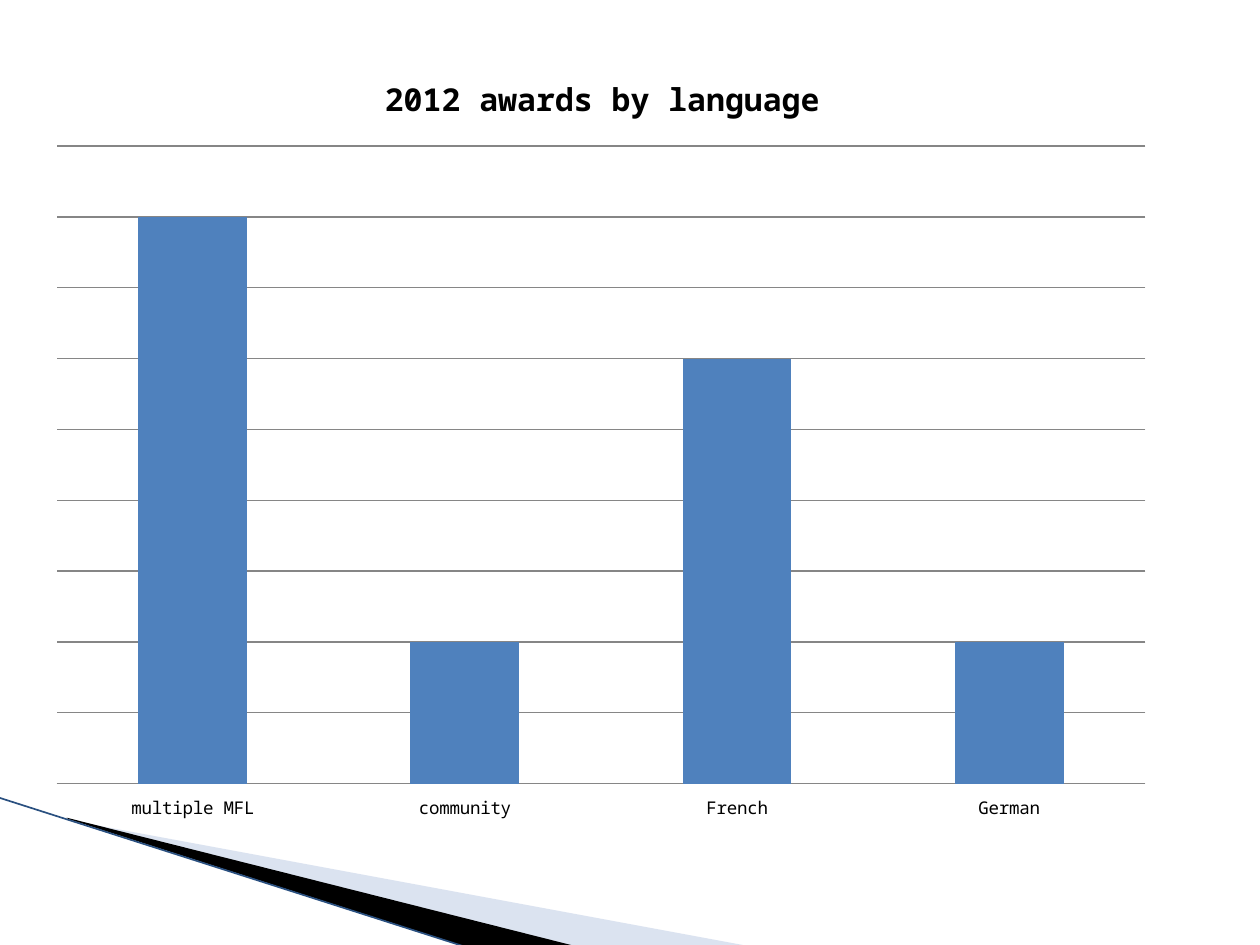
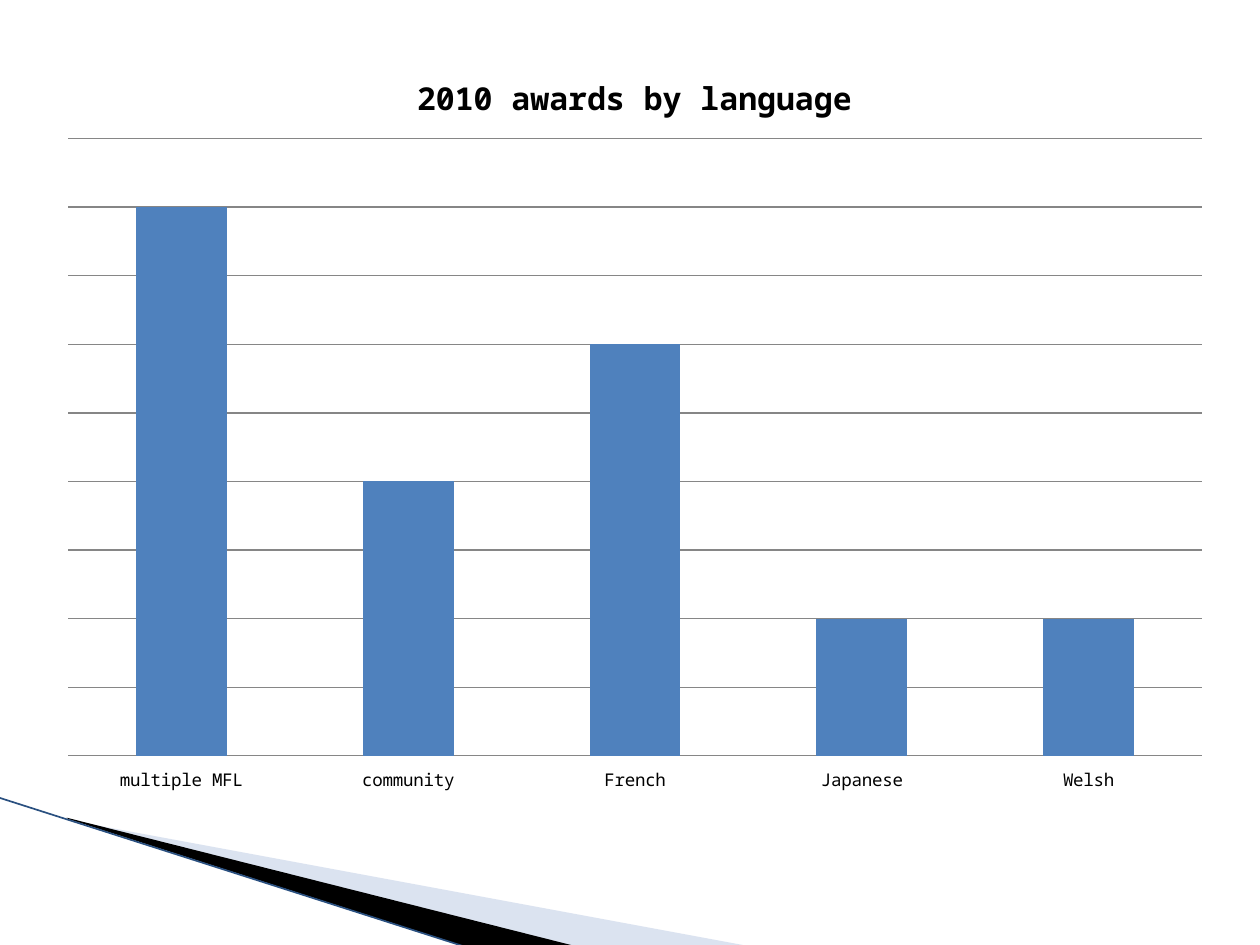
from dataclasses import dataclass
from typing import NamedTuple

from lxml.etree import SubElement
from pptx import Presentation
from pptx.chart.data import CategoryChartData
from pptx.dml.color import RGBColor
from pptx.enum.chart import XL_CHART_TYPE as ChartType, XL_TICK_LABEL_POSITION as LabelPosition
from pptx.enum.chart import XL_TICK_MARK as TickMark
from pptx.enum.shapes import MSO_CONNECTOR as Connector
from pptx.oxml.ns import qn
from pptx.util import Pt

PX = 9144


class Point(NamedTuple):
    x: int
    y: int


class Box(NamedTuple):
    left: int
    top: int
    width: int
    height: int

    def emu(self) -> list[int]:
        return [length * PX for length in self]


@dataclass(frozen=True)
class Theme:
    font: str = "Noto Sans Mono"
    text: str = "000000"
    bar: str = "4F81BD"
    grid: str = "868686"
    wedge_light: str = "A7B9DB"
    wedge_dark: str = "000000"
    edge: str = "2A5080"
    title_size: int = 18
    label_size: int = 10
    grid_width: float = 0.75
    edge_width: float = 0.95


@dataclass(frozen=True)
class Wedge:
    points: tuple[Point, ...]
    color: str
    opacity: int = 100


@dataclass(frozen=True)
class AwardsChart:
    title: str
    box: Box
    plot: Box
    awards: dict[str, int]


THEME = Theme()
SLIDE = Box(0, 0, 1000, 750)
WEDGES = (
    Wedge((Point(55, 651), Point(595, 751), Point(456, 751), Point(55, 650)),
          THEME.wedge_light, 40),
    Wedge((Point(53, 649), Point(457, 751), Point(372, 752), Point(54, 650)),
          THEME.wedge_dark),
)
EDGE = (Point(-1, 633), Point(371, 752))
CHARTS = (
    AwardsChart("2012 awards by language", Box(28, 36, 900, 620), Box(45, 116, 864, 506),
                {"multiple MFL": 100, "community": 25, "French": 75, "German": 25}),
    AwardsChart("2010 awards by language", Box(35, 36, 937, 598), Box(54, 110, 900, 490),
                {"multiple MFL": 100, "community": 50, "French": 75,
                 "Japanese": 25, "Welsh": 25}),
)


def rgb(color: str) -> RGBColor:
    return RGBColor.from_string(color)


def format_font(font, *, size: int, bold: bool = False, color: str = THEME.text) -> None:
    font.name = THEME.font
    font.size = Pt(size)
    font.bold = bold
    font.color.rgb = rgb(color)


def write_text(frame, text: str, **font_format) -> None:
    run = frame.paragraphs[0].add_run()
    run.text = text
    format_font(run.font, **font_format)


def format_line(line, color: str, width: float) -> None:
    line.color.rgb = rgb(color)
    line.width = Pt(width)


def draw_wedge(slide, wedge: Wedge) -> None:
    start, *rest = wedge.points
    builder = slide.shapes.build_freeform(start.x, start.y, scale=PX)
    builder.add_line_segments(rest, close=True)
    shape = builder.convert_to_shape()
    shape.shadow.inherit = False
    shape.line.fill.background()
    shape.fill.solid()
    shape.fill.fore_color.rgb = rgb(wedge.color)
    if wedge.opacity < 100:
        color = shape.fill._xPr.find(f"{qn('a:solidFill')}/{qn('a:srgbClr')}")
        SubElement(color, qn("a:alpha"), val=str(wedge.opacity * 1000))


def draw_corner(slide) -> None:
    for wedge in WEDGES:
        draw_wedge(slide, wedge)
    ends = [length * PX for point in EDGE for length in point]
    edge = slide.shapes.add_connector(Connector.STRAIGHT, *ends)
    format_line(edge.line, THEME.edge, THEME.edge_width)
    SubElement(edge._element.spPr, qn("a:effectLst"))


def place_plot(chart, box: Box, plot: Box) -> None:
    area = chart._chartSpace.chart.plotArea
    layout = area.find(qn("c:layout"))
    if layout is None:
        layout = SubElement(area, qn("c:layout"))
        area.insert(0, layout)
    manual = SubElement(layout, qn("c:manualLayout"))
    settings = {
        "layoutTarget": "inner",
        "xMode": "edge",
        "yMode": "edge",
        "x": (plot.left - box.left) / box.width,
        "y": (plot.top - box.top) / box.height,
        "w": plot.width / box.width,
        "h": plot.height / box.height,
    }
    for name, value in settings.items():
        SubElement(manual, qn(f"c:{name}"), val=str(value))


def draw_chart(slide, awards_chart: AwardsChart) -> None:
    data = CategoryChartData()
    data.categories = list(awards_chart.awards)
    data.add_series("Series 1", list(awards_chart.awards.values()))
    chart = slide.shapes.add_chart(
        ChartType.COLUMN_CLUSTERED, *awards_chart.box.emu(), data).chart
    format_font(chart.font, size=THEME.label_size)
    chart.has_legend = False
    chart.has_title = True
    write_text(chart.chart_title.text_frame, awards_chart.title,
               size=THEME.title_size, bold=True)

    plot = chart.plots[0]
    plot.gap_width = 150
    plot.vary_by_categories = False
    bars = plot.series[0].format
    bars.fill.solid()
    bars.fill.fore_color.rgb = rgb(THEME.bar)

    categories = chart.category_axis
    categories.major_tick_mark = TickMark.NONE
    categories.minor_tick_mark = TickMark.NONE
    categories.tick_label_position = LabelPosition.LOW
    format_line(categories.format.line, THEME.grid, THEME.grid_width)

    values = chart.value_axis
    values.visible = False
    values.minimum_scale = 0
    values.maximum_scale = 112.5
    values.major_unit = 12.5
    values.has_major_gridlines = True
    format_line(values.major_gridlines.format.line, THEME.grid, THEME.grid_width)
    place_plot(chart, awards_chart.box, awards_chart.plot)


def main() -> None:
    presentation = Presentation()
    presentation.slide_width = SLIDE.width * PX
    presentation.slide_height = SLIDE.height * PX
    blank_layout = presentation.slide_layouts[6]
    for awards_chart in CHARTS:
        slide = presentation.slides.add_slide(blank_layout)
        draw_corner(slide)
        draw_chart(slide, awards_chart)
    presentation.save("out.pptx")


if __name__ == "__main__":
    main()
